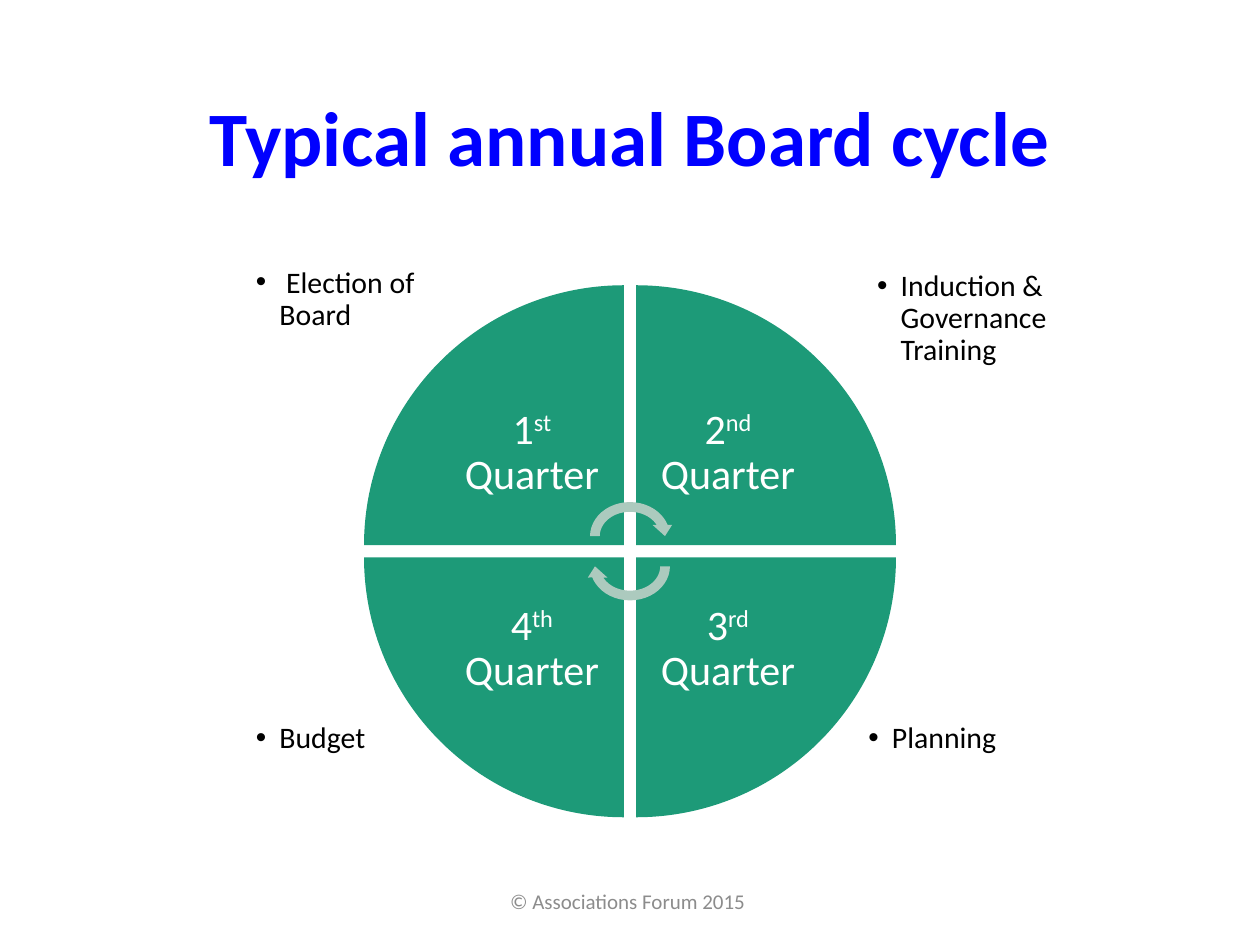
from lxml.etree import SubElement
from pptx import Presentation
from pptx.dml.color import RGBColor as Rgb
from pptx.enum.shapes import MSO_SHAPE as Form
from pptx.enum.text import MSO_ANCHOR as Anchor, PP_ALIGN as Align
from pptx.oxml.ns import qn
from pptx.util import Pt

HUES = {
    "title": "0000FF", "wedge": "1D9A78", "arrow": "ACCABE",
    "label": "FFFFFF", "note": "000000", "foot": "8C8C8C",
}
QUARTERS = [
    ("1", "st", -1, -1), ("2", "nd", 1, -1),
    ("3", "rd", 1, 1), ("4", "th", -1, 1),
]
NOTES = [
    (" Election of Board", 0, 0),
    ("Induction & Governance Training", 355, 2),
    ("Planning", 350, 260.5),
    ("Budget", 0, 260.5),
]


def add_text(slide, box, parts, size, hue, bold=False, align=Align.CENTER,
             anchor=Anchor.MIDDLE, inset=(7.2, 3.6), lead=0.9, bullet=False):
    """Place a paragraph whose parts are (text, raised) pairs."""
    frame = slide.shapes.add_textbox(*map(Pt, box)).text_frame
    frame.word_wrap = True
    frame.vertical_anchor = anchor
    frame.margin_left = frame.margin_right = Pt(inset[0])
    frame.margin_top = frame.margin_bottom = Pt(inset[1])
    para = frame.paragraphs[0]
    para.alignment = align
    para.line_spacing = lead
    if bullet:
        props = para._p.get_or_add_pPr()
        props.set("marL", str(Pt(13.5)))
        props.set("indent", str(Pt(-13.5)))
        SubElement(props, qn("a:buFont"), typeface="Arial")
        SubElement(props, qn("a:buChar"), char="•")
    for text, raised in parts:
        run = para.add_run()
        run.text = text
        font = run.font
        font.name, font.size, font.bold = "Calibri", Pt(size), bold
        font.color.rgb = Rgb.from_string(HUES[hue])
        if raised:
            run._r.get_or_add_rPr().set("baseline", "30000")


def add_form(slide, form, box, hue, turn=0):
    """Place a filled preset shape without outline."""
    shape = slide.shapes.add_shape(form, *map(Pt, box))
    shape.shadow.inherit = False
    shape.fill.solid()
    shape.fill.fore_color.rgb = Rgb.from_string(HUES[hue])
    shape.line.fill.background()
    shape.rotation = turn


def add_cycle(slide, left, top, span):
    """Draw four labelled wedges and the two arrows between them."""
    gap, side = 7, 105
    wedge = (span - gap) / 2
    mid_x, mid_y = left + span / 2, top + span / 2

    def corner(size, dx, dy):
        """Give the box of a square that touches the gap on one side."""
        reach = (gap + size) / 2
        return (mid_x + dx * reach - size / 2,
                mid_y + dy * reach - size / 2, size, size)

    for turn, (digit, mark, dx, dy) in enumerate(QUARTERS):
        add_form(slide, Form.PIE_WEDGE, corner(wedge, dx, dy), "wedge", turn * 90)
        add_text(slide, corner(side, dx, dy),
                 [(digit, False), (mark, True), (" Quarter", False)],
                 24, "label", inset=(13.4, 13.4))
    wide, high, shift = 51.2, 44.5, 8.6
    for turn, way in ((0, -1), (180, 1)):
        box = (mid_x - wide / 2, mid_y + way * shift - high / 2, wide, high)
        add_form(slide, Form.CIRCULAR_ARROW, box, "arrow", turn)


def add_notes(slide, left, top):
    """Place the bulleted note beside each quarter."""
    for text, dx, dy in NOTES:
        add_text(slide, (left + dx, top + dy, 114, 78), [(text, False)], 17,
                 "note", align=Align.LEFT, anchor=Anchor.TOP,
                 inset=(6.5, 6.5), bullet=True)


def main():
    """Build and save the slide."""
    deck = Presentation()
    deck.slide_width, deck.slide_height = Pt(720), Pt(540)
    slide = deck.slides.add_slide(deck.slide_layouts[6])
    add_text(slide, (49.5, 28.75, 621, 104.4),
             [("Typical annual Board cycle", False)], 44, "title", bold=True)
    add_notes(slide, 139.7, 146.3)
    add_cycle(slide, 208, 163, 304)
    add_text(slide, (238.5, 500.5, 243, 28.75),
             [("© Associations Forum 2015 ", False)], 12, "foot", lead=1)
    deck.save("out.pptx")


if __name__ == "__main__":
    main()
